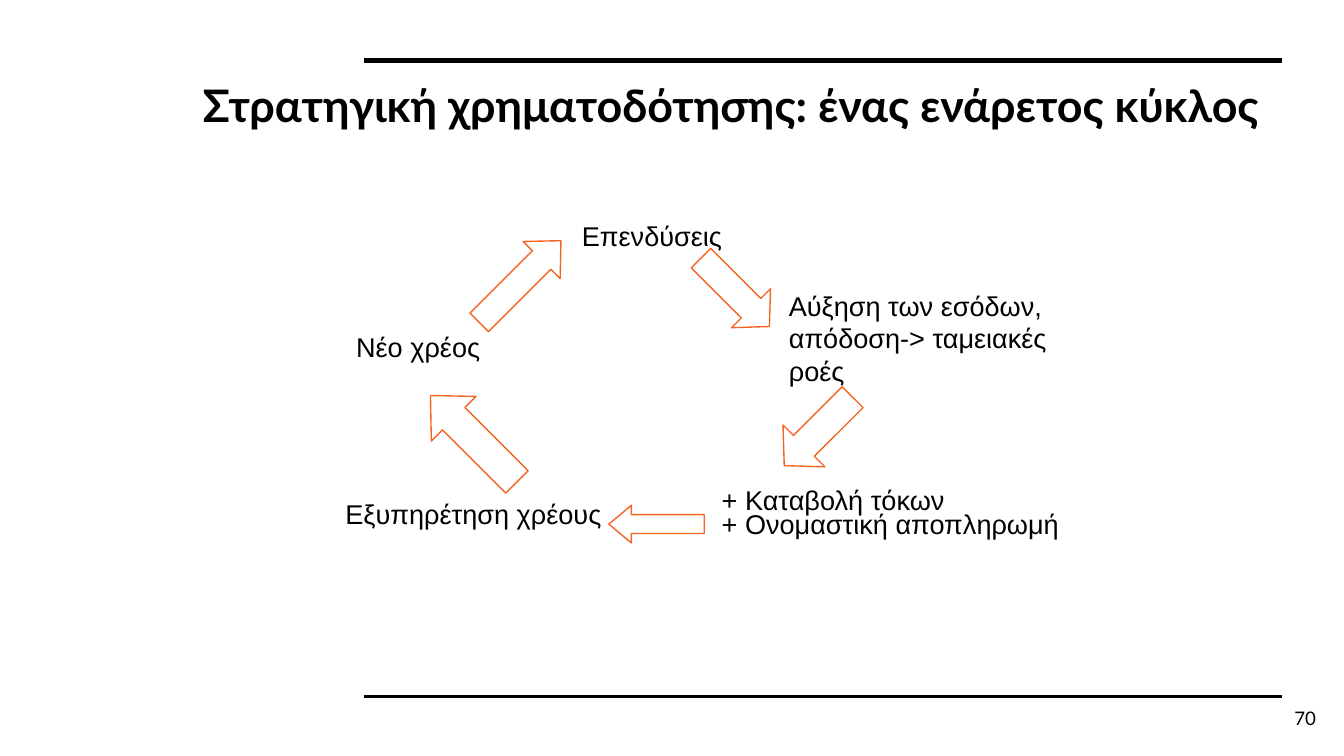
from pptx import Presentation
from pptx.dml.color import RGBColor
from pptx.enum.shapes import MSO_CONNECTOR, MSO_SHAPE
from pptx.enum.text import MSO_ANCHOR, PP_ALIGN
from pptx.oxml.ns import qn
from pptx.util import Inches, Pt
from lxml.etree import SubElement

COLORS = {"ink": "000000", "arrow": "F46524"}

LABELS = [
    (2.58, 2.42, 1.6, 0.32, ["Νέο χρέος"]),
    (4.26, 1.59, 2.2, 0.32, ["Επενδύσεις"]),
    (5.8, 2.11, 2.1, 0.81, ["Αύξηση των εσόδων, απόδοση-> ταμειακές ροές"]),
    (2.5, 3.66, 2.11, 0.56, ["Εξυπηρέτηση χρέους"]),
]

ARROWS = [
    (MSO_SHAPE.RIGHT_ARROW, 5.11, 1.97, 0.72, 0.41, 45, 0.47),
    (MSO_SHAPE.LEFT_ARROW, 3.07, 3.03, 0.91, 0.47, 45, 0.52),
    (MSO_SHAPE.RIGHT_ARROW, 3.44, 1.9, 0.86, 0.39, 315, 0.52),
    (MSO_SHAPE.DOWN_ARROW, 5.87, 2.85, 0.44, 0.72, 45, 0.47),
    (MSO_SHAPE.LEFT_ARROW, 4.53, 3.76, 0.71, 0.28, 0, 0.6),
]


def color(name):
    return RGBColor.from_string(COLORS[name])


def add_text(slide, x, y, w, h, lines, size=14.5, font="Arial", bold=False,
             pad=(0.07, 0.04), align=PP_ALIGN.LEFT, anchor=MSO_ANCHOR.TOP,
             spacing=None, before=0):
    box = slide.shapes.add_textbox(Inches(x), Inches(y), Inches(w), Inches(h))
    frame = box.text_frame
    frame.word_wrap = True
    frame.vertical_anchor = anchor
    frame.margin_left = frame.margin_right = Inches(pad[0])
    frame.margin_top = frame.margin_bottom = Inches(pad[1])
    for i, line in enumerate(lines):
        para = frame.paragraphs[0] if i == 0 else frame.add_paragraph()
        para.alignment = align
        if spacing:
            para.line_spacing = spacing
        if i and before:
            para.space_before = Pt(before)
        run = para.add_run()
        run.text = line
        run.font.name = font
        run.font.size = Pt(size)
        run.font.bold = bold
        run.font.color.rgb = color("ink")


def add_arrow(slide, kind, x, y, w, h, turn, head):
    arrow = slide.shapes.add_shape(kind, Inches(x), Inches(y), Inches(w), Inches(h))
    arrow.rotation = turn
    arrow.adjustments[0] = 0.5
    arrow.adjustments[1] = head
    arrow.shadow.inherit = False
    arrow.fill.background()
    arrow.line.color.rgb = color("arrow")
    arrow.line.width = Pt(0.75)


def add_rule(slide, y, width):
    rule = slide.shapes.add_connector(
        MSO_CONNECTOR.STRAIGHT, Inches(2.71), Inches(y), Inches(9.54), Inches(y))
    rule.line.color.rgb = color("ink")
    rule.line.width = Pt(width)
    SubElement(rule._element.spPr, qn("a:effectLst"))


def main():
    deck = Presentation()
    deck.slide_width = Inches(10)
    deck.slide_height = Inches(10 * 9 / 16)
    slide = deck.slides.add_slide(deck.slide_layouts[6])

    for label in LABELS:
        add_text(slide, *label)
    add_text(slide, 5.3, 3.62, 2.93, 0.43,
             ["+ Καταβολή τόκων", "+ Ονομαστική αποπληρωμή"],
             spacing=0.7, before=0.7)
    for arrow in ARROWS:
        add_arrow(slide, *arrow)

    add_text(slide, 1.41, 0.48, 8.13, 0.66,
             ["Στρατηγική χρηματοδότησης: ένας ενάρετος κύκλος"],
             size=24, font="Lato", bold=True, pad=(0.1, 0.1))
    add_rule(slide, 0.45, 3)
    add_rule(slide, 5.18, 1.5)
    add_text(slide, 9.29, 5.13, 0.6, 0.43, ["70"], size=10, font="Lato",
             pad=(0.1, 0.1), align=PP_ALIGN.RIGHT, anchor=MSO_ANCHOR.MIDDLE)

    deck.save("out.pptx")


if __name__ == "__main__":
    main()
